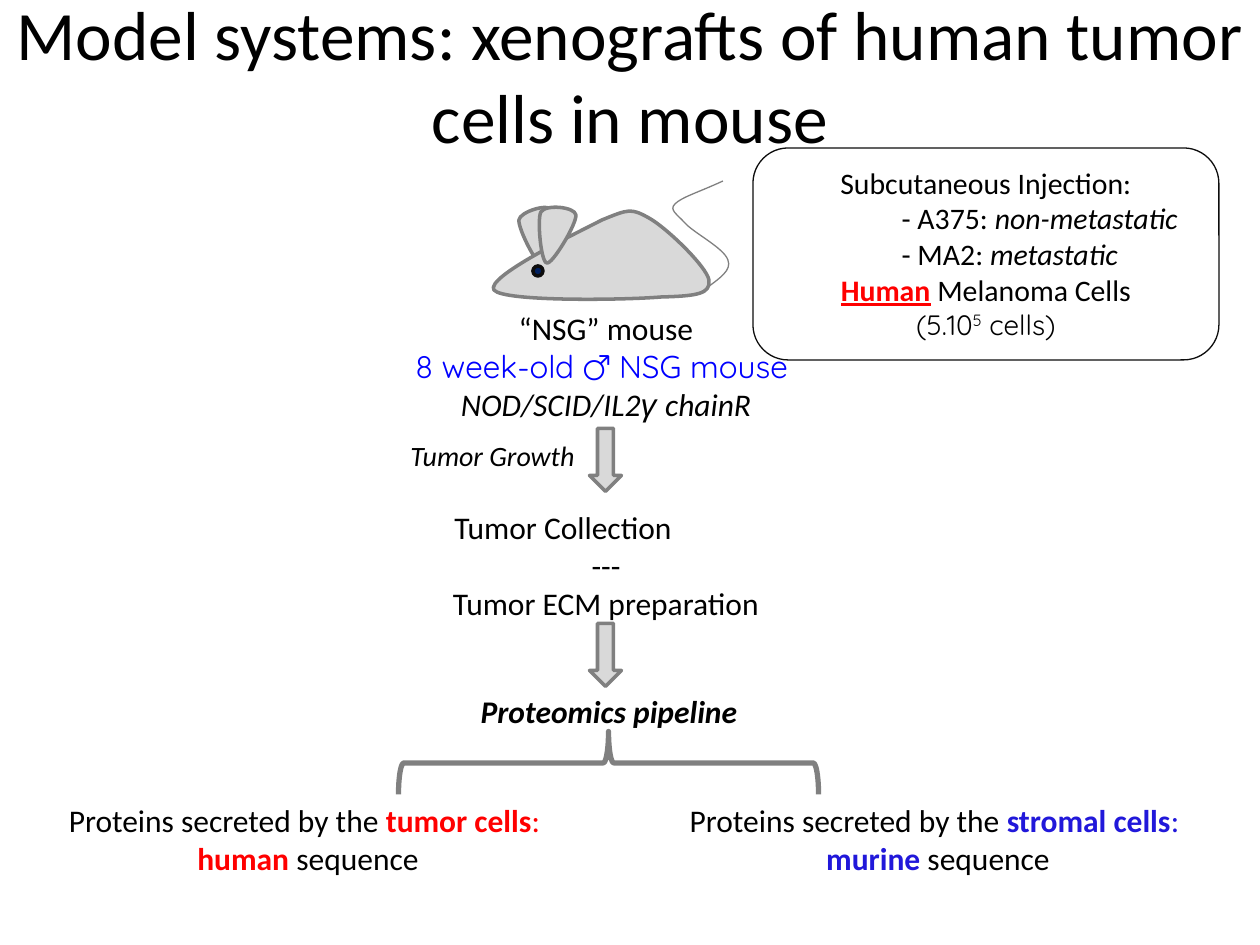
from lxml import etree
from pptx import Presentation
from pptx.dml.color import RGBColor
from pptx.enum.shapes import MSO_SHAPE as SHAPE
from pptx.enum.text import MSO_ANCHOR as ANCHOR, MSO_AUTO_SIZE as AUTO, PP_ALIGN as ALIGN
from pptx.oxml.ns import qn
from pptx.util import Pt

PX = 914400 // 126
BLACK = RGBColor(0, 0, 0)
INK = RGBColor(0x0D, 0x0D, 0x0D)
GRAY = RGBColor(0x80, 0x80, 0x80)
LIGHT = RGBColor(0xD9, 0xD9, 0xD9)
NAVY = RGBColor(0x00, 0x20, 0x60)
RED = RGBColor(0xFF, 0, 0)
BLUE = RGBColor(0, 0, 0xFF)
INDIGO = RGBColor(0x21, 0x18, 0xDA)

# Content: a paragraph is a list of (text, format) runs
TITLE = "Model systems: xenografts of human tumor cells in mouse"
QUICK = dict(font="Quicksand", size=16)
INJECTION = [
    [("Subcutaneous Injection:", {})],
    [("- A375: ", {}), ("non-metastatic", dict(italic=True))],
    [("- MA2: ", {}), ("metastatic", dict(italic=True))],
    [("Human", dict(color=RED, bold=True, underline=True)), (" Melanoma Cells", {})],
    [("(5.10", QUICK), ("5", dict(QUICK, raised=True)), (" cells)", QUICK)],
]
MOUSE = [
    [("“NSG” mouse", {})],
    [("8 week-old ♂ NSG mouse ", dict(font="Quicksand", color=BLUE))],
    [("NOD/SCID/IL2", dict(italic=True)), ("γ ", dict(italic=True, font="Arial")),
     ("chainR", dict(italic=True))],
]
STEPS = [[("Tumor Collection", {})], [("---", {})], [("Tumor ECM preparation", {})]]
PIPELINE = [[("Proteomics pipeline", dict(bold=True, italic=True))]]
GROWTH = [[("Tumor Growth", dict(italic=True, size=16))]]
OUTCOMES = [("tumor cells", "human ", RED), ("stromal cells", "murine ", INDIGO)]

# Mouse outlines: start point, then Bezier triples (control, control, end)
FAR_EAR = [(544, 267), (549, 265), (557, 219), (552, 210), (548, 203), (520, 212),
           (519, 220), (518, 229), (538, 268), (544, 267)]
BODY = [(494, 290), (485, 277), (577, 233), (602, 220), (629, 209), (631, 208),
        (649, 218), (667, 228), (707, 267), (709, 280), (711, 294), (697, 296),
        (661, 297), (626, 300), (504, 302), (494, 290)]
TAIL = [(708, 287), (720, 278), (732, 270), (728, 260), (724, 248), (694, 233),
        (685, 223), (677, 214), (669, 210), (675, 204), (682, 197), (697, 193), (723, 181)]
NEAR_EAR = [(547, 263), (552, 265), (577, 224), (576, 215), (575, 207), (546, 204),
            (541, 212), (537, 219), (541, 263), (547, 263)]


def add_run(p, text, size=18, font="Calibri", color=BLACK, bold=False, italic=False,
            underline=False, raised=False):
    r = p.add_run()
    r.text = text
    f = r.font
    f.size, f.name, f.bold, f.italic, f.underline = Pt(size), font, bold, italic, underline
    f.color.rgb = color
    if raised:
        r._r.get_or_add_rPr().set("baseline", "30000")


def write(sp, paragraphs, align=ALIGN.CENTER, wrap=True, **fmt):
    tf = sp.text_frame
    tf.word_wrap, tf.auto_size = wrap, AUTO.NONE
    for i, runs in enumerate(paragraphs):
        p = tf.add_paragraph() if i else tf.paragraphs[0]
        p.alignment = align
        for text, own in runs:
            add_run(p, text, **{**fmt, **own})
    return tf


def indent(p, margin):
    p.alignment = ALIGN.LEFT
    pPr = p._p.get_or_add_pPr()
    pPr.set("marL", str(margin * PX))
    pPr.set("indent", "0")


def text_box(box, paragraphs, **kw):
    return write(slide.shapes.add_textbox(*(v * PX for v in box)), paragraphs, **kw)


def paint(sp, line, width, fill=None):
    sp.shadow.inherit = False
    sp.line.color.rgb, sp.line.width = line, Pt(width)
    if fill is None:
        sp.fill.background()
    else:
        sp.fill.solid()
        sp.fill.fore_color.rgb = fill
    return sp


def preset(shapes, kind, box, line, width, fill=None, rotation=0):
    sp = paint(shapes.add_shape(kind, *(v * PX for v in box)), line, width, fill)
    sp.rotation = rotation
    return sp


def curve(shapes, points, width, fill=None):
    builder = shapes.build_freeform(*points[0], scale=PX)
    builder.add_line_segments(points[1:], close=points[0] == points[-1])
    sp = builder.convert_to_shape()
    # Turn every three line segments into one Bezier segment
    lines = list(sp._element.iter(qn("a:lnTo")))
    for i in range(0, len(lines), 3):
        bezier = etree.Element(qn("a:cubicBezTo"))
        lines[i].addprevious(bezier)
        for line in lines[i:i + 3]:
            bezier.append(line[0])
            line.getparent().remove(line)
    return paint(sp, GRAY, width, fill)


prs = Presentation()
prs.slide_width, prs.slide_height = 1260 * PX, 945 * PX
slide = prs.slides.add_slide(prs.slide_layouts[5])

# Title
title = slide.shapes.title
title.left, title.top, title.width, title.height = 0, 0, 1260 * PX, 149 * PX
write(title, [[(TITLE, {})]], size=39.6).vertical_anchor = ANCHOR.MIDDLE

# Injection box, with the cell lines indented
box = preset(slide.shapes, SHAPE.ROUNDED_RECTANGLE, (753, 148, 466, 212), INK, 0.75)
tf = write(box, INJECTION, size=17)
tf.vertical_anchor = ANCHOR.TOP
for p in tf.paragraphs[1:3]:
    indent(p, 126)

# Mouse
mouse = slide.shapes.add_group_shape().shapes
curve(mouse, FAR_EAR, 2, LIGHT)
curve(mouse, BODY, 2, LIGHT)
preset(mouse, SHAPE.OVAL, (533, 266, 10, 10), INK, 2, NAVY)
curve(mouse, TAIL, 0.75)
curve(mouse, NEAR_EAR, 2, LIGHT)
text_box((401, 303, 410, 127), MOUSE)

# Outcomes under the brace
preset(slide.shapes, SHAPE.LEFT_BRACE, (577, 553, 63, 420), GRAY, 3, rotation=90)
for i, (cells, species, color) in enumerate(OUTCOMES):
    strong = dict(color=color, bold=True)
    text_box((14 + 630 * i, 795, 588, 89), [
        [("Proteins secreted by the ", {}), (cells, strong), (": ", dict(color=color))],
        [(species, strong), ("sequence", {})],
    ])

# Workflow
for top in (444, 639):
    preset(slide.shapes, SHAPE.RIGHT_ARROW, (574, top, 63, 32), GRAY, 2, LIGHT, rotation=90)
steps = text_box((333, 502, 546, 127), STEPS)
indent(steps.paragraphs[0], 109)
text_box((463, 686, 292, 50), PIPELINE, wrap=False)
text_box((335, 432, 252, 47), GROWTH, align=ALIGN.RIGHT)

prs.save("out.pptx")
